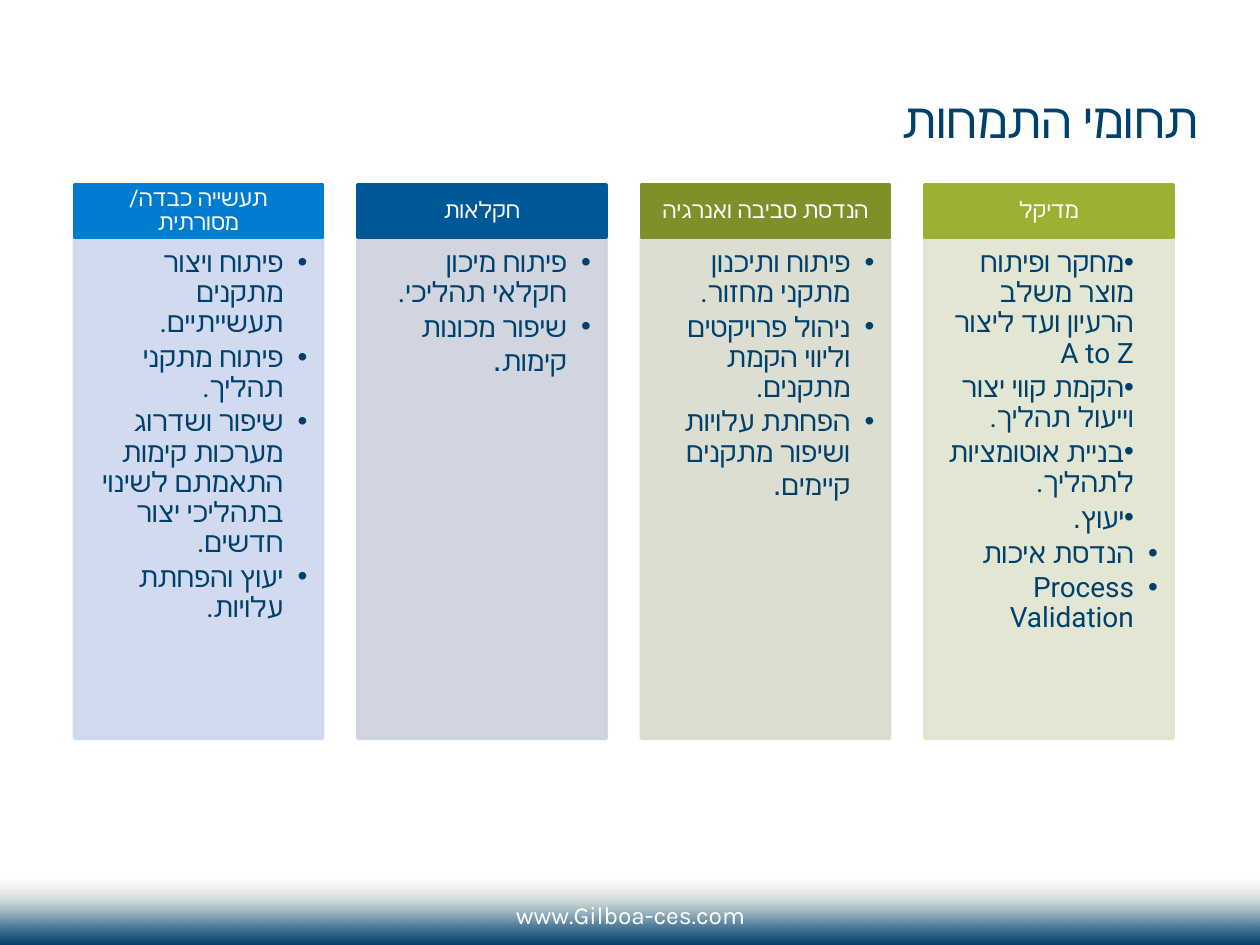
"""Build a right-to-left slide with four columns of expertise."""
import dataclasses

import lxml.etree
import pptx
import pptx.dml.color
import pptx.enum.shapes
import pptx.enum.text
import pptx.oxml.ns
import pptx.util

Inches = pptx.util.Inches
Pt = pptx.util.Pt
qn = pptx.oxml.ns.qn
ALIGN = pptx.enum.text.PP_ALIGN
ANCHOR = pptx.enum.text.MSO_ANCHOR


@dataclasses.dataclass(frozen=True)
class Theme:
    ink: str = "00406C"
    white: str = "FFFFFF"
    fade: tuple = ((0, "CBD5AF", 7), (69, "00406D", 66), (100, "00406D", 100))
    main: str = "Roboto"
    head: str = "Times New Roman"
    web: str = "Karla"
    dot: str = "Arial"
    title: int = 28
    body: int = 16
    label: int = 13
    foot: int = 14


THEME = Theme()
LEFT, PITCH, WIDTH = 0.59, 2.25, 1.97
TOP, HEAD, BODY = 1.47, 0.41, 3.98
HANG = 0.19

# Each item: text, tail, tail size, hanging bullet
COLUMNS = [
    ("תעשייה כבדה/ מסורתית", "007CD0", "CCD7EE", [
        ("פיתוח ויצור מתקנים תעשייתיים.", "", 0, True),
        ("פיתוח מתקני תהליך.", "", 0, True),
        ("שיפור ושדרוג מערכות קימות התאמתם לשינוי בתהליכי יצור חדשים. ", "", 0, True),
        ("יעוץ והפחתת עלויות.", "", 0, True)]),
    ("חקלאות", "005996", "CCD1DD", [
        ("פיתוח מיכון חקלאי תהליכי.", "", 0, True),
        ("שיפור מכונות קימות", ". ", 19, True)]),
    ("הנדסת סביבה ואנרגיה", "808F29", "D8DBCD", [
        ("פיתוח ותיכנון מתקני מחזור.", "", 0, True),
        ("ניהול פרויקטים וליווי הקמת מתקנים.", "", 0, True),
        ("הפחתת עלויות ושיפור מתקנים קיימים", ".", 18, True)]),
    ("מדיקל", "9DB033", "DFE4CE", [
        ("מחקר ופיתוח מוצר משלב הרעיון ועד ליצור A to Z", "", 0, False),
        ("הקמת קווי יצור וייעול תהליך.", "", 0, False),
        ("בניית אוטומציות לתהליך.", "", 0, False),
        ("יעוץ", ". ", 17, False),
        ("הנדסת איכות", "", 0, True),
        ("Process Validation", "", 0, True)]),
]


def node(parent, tag, **attrs):
    """Add a drawing element below a parent."""
    return lxml.etree.SubElement(parent, qn(tag), {k: str(v) for k, v in attrs.items()})


def place(shape, left, top, width, height):
    """Set the position and size of a shape in inches."""
    shape.left, shape.top = Inches(left), Inches(top)
    shape.width, shape.height = Inches(width), Inches(height)


def paint(shape, color, alpha=100):
    """Give a shape one colour for its fill and its outline."""
    rgb = pptx.dml.color.RGBColor.from_string(color)
    for fill in (shape.fill, shape.line.fill):
        fill.solid()
        fill.fore_color.rgb = rgb
    shape.line.width = Pt(2)
    if alpha < 100:
        for tone in shape._element.spPr.iter(qn("a:srgbClr")):
            node(tone, "a:alpha", val=alpha * 1000)


def frame(shape, anchor, insets):
    """Set up the text frame of a shape."""
    text = shape.text_frame
    text.word_wrap = True
    text.auto_size = pptx.enum.text.MSO_AUTO_SIZE.NONE
    text.vertical_anchor = anchor
    (text.margin_left, text.margin_top,
     text.margin_right, text.margin_bottom) = map(Inches, insets)
    return text


def write(para, words, font, size, color, script=None):
    """Add one run with its Latin and Hebrew fonts."""
    run = para.add_run()
    run.text = words
    run.font.name, run.font.size, run.font.bold = font, Pt(size), False
    run.font.color.rgb = pptx.dml.color.RGBColor.from_string(color)
    node(run._r.get_or_add_rPr(), "a:cs", typeface=script or font)


def align(para, side, after=None):
    """Set a right-to-left paragraph, with space after in percent."""
    para.alignment = side
    props = para._p.get_or_add_pPr()
    props.set("rtl", "1")
    if after:
        para.line_spacing = 0.9
        para.space_before = Pt(0)
        node(node(props, "a:spcAft"), "a:spcPct", val=after * 1000)
    return props


def bullet(para, hang):
    """Turn a paragraph into a list item."""
    para.level = 1
    props = align(para, ALIGN.RIGHT, 15)
    props.set("marL", str(Inches(HANG)))
    props.set("indent", str(-Inches(HANG) if hang else 0))
    node(props, "a:buFont", typeface=THEME.dot)
    node(props, "a:buChar", char="•")


def panel(box, left, color, items):
    """Fill a body placeholder with a tinted list."""
    place(box, left, TOP + HEAD, WIDTH, BODY)
    paint(box, color, 90)
    text = frame(box, ANCHOR.TOP, (0.09, 0.09, 0.12, 0.14))
    for i, (words, tail, size, hang) in enumerate(items):
        para = text.add_paragraph() if i else text.paragraphs[0]
        bullet(para, hang)
        write(para, words, THEME.main, THEME.body, THEME.ink)
        if tail:
            write(para, tail, THEME.dot, size, THEME.ink)


def block(slide, left, top, width, height):
    """Add a plain rectangle without a shadow."""
    shape = slide.shapes.add_shape(
        pptx.enum.shapes.MSO_SHAPE.RECTANGLE,
        Inches(left), Inches(top), Inches(width), Inches(height))
    shape.shadow.inherit = False
    return shape


def header(slide, left, words, color):
    """Add the coloured heading of a column."""
    shape = block(slide, left, TOP, WIDTH, HEAD)
    paint(shape, color)
    para = frame(shape, ANCHOR.MIDDLE, (0.1, 0.06, 0.1, 0.06)).paragraphs[0]
    align(para, ALIGN.CENTER, 35)
    write(para, words, THEME.head, THEME.label, THEME.white, THEME.main)


def footer(slide):
    """Add the fading band and the web address."""
    band = block(slide, 0, 6.98, 10, 0.52)
    band.line.fill.background()
    band.fill.gradient()
    band.fill.gradient_angle = 270
    stops = next(band._element.spPr.iter(qn("a:gsLst")))
    stops.clear()
    for pos, color, alpha in THEME.fade:
        tone = node(node(stops, "a:gs", pos=pos * 1000), "a:srgbClr", val=color)
        node(tone, "a:alpha", val=alpha * 1000)
    box = slide.shapes.add_textbox(Inches(3.42), Inches(7.09), Inches(3.17), Inches(0.26))
    para = frame(box, ANCHOR.TOP, (0.1, 0.05, 0.1, 0.05)).paragraphs[0]
    align(para, ALIGN.CENTER)
    write(para, "www.Gilboa-ces.com", THEME.web, THEME.foot, THEME.white)


def heading(slide):
    """Write the slide title."""
    title = slide.shapes.title
    place(title, 3.42, 0.24, 6.19, 0.99)
    para = frame(title, ANCHOR.BOTTOM, (0.1, 0.05, 0.1, 0.05)).paragraphs[0]
    align(para, ALIGN.RIGHT)
    write(para, "תחומי התמחות", THEME.main, THEME.title, THEME.ink)


def main():
    """Build and save the slide."""
    deck = pptx.Presentation()
    deck.slide_width, deck.slide_height = Inches(10), Inches(7.5)
    slide = deck.slides.add_slide(deck.slide_layouts.get_by_name("Comparison"))
    heading(slide)
    boxes = list(slide.placeholders)[1:]
    for i, (words, dark, light, items) in enumerate(COLUMNS):
        left = LEFT + i * PITCH
        panel(boxes[i], left, light, items)
        header(slide, left, words, dark)
    footer(slide)
    deck.save("out.pptx")


if __name__ == "__main__":
    main()
